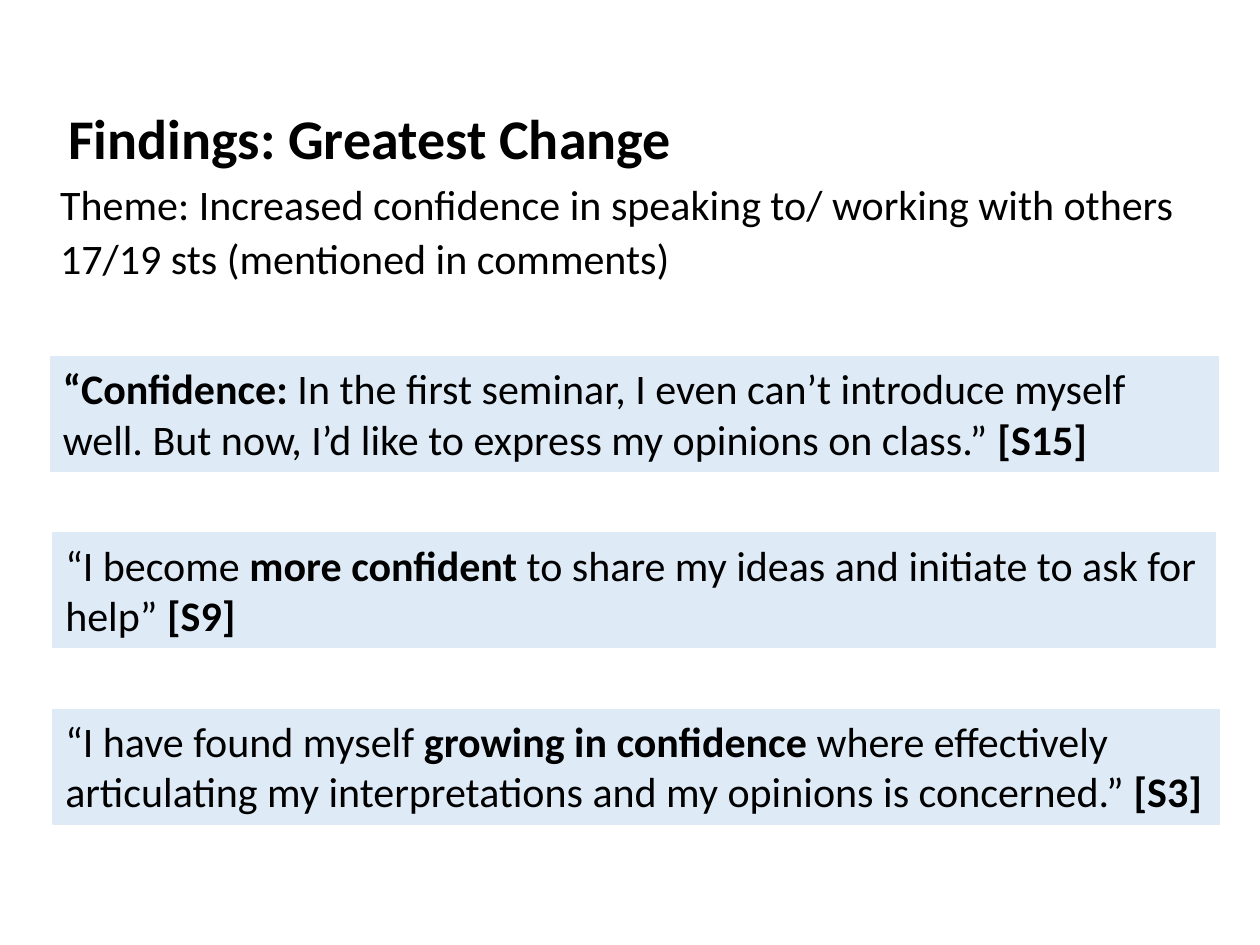
"""Build the findings slide: a title, a theme and three student quotes."""
from pptx import Presentation
from pptx.dml.color import RGBColor
from pptx.enum.shapes import MSO_SHAPE
from pptx.enum.text import MSO_ANCHOR, MSO_AUTO_SIZE, PP_ALIGN
from pptx.util import Inches, Pt

RECT = MSO_SHAPE.RECTANGLE
TOP = MSO_ANCHOR.TOP
LEFT = PP_ALIGN.LEFT
NO_FIT, GROW = MSO_AUTO_SIZE.NONE, MSO_AUTO_SIZE.SHAPE_TO_FIT_TEXT
COLORS = {"text": "000000", "panel": "DEEBF7"}
FONT = "Calibri"
TITLE_SIZE, TEXT_SIZE = 32, 24
QUOTE_TOP, QUOTE_PITCH, QUOTE_HEIGHT = 2.83, 1.4, 0.91

THEME = [
    "Theme: Increased confidence in speaking to/ working with others",
    "17/19 sts (mentioned in comments)",
]
QUOTES = [
    (0.4, 9.27, [
        ("“Confidence:", True),
        (" In the first seminar, I even can’t introduce myself well. "
         "But now, I’d like to express my opinions on class.” ", False),
        ("[S15]", True)]),
    (0.42, 9.23, [
        ("“I become ", False),
        ("more confident ", True),
        ("to share my ideas and initiate to ask for help” ", False),
        ("[S9]", True)]),
    (0.42, 9.26, [
        ("“I have found myself ", False),
        ("growing in confidence ", True),
        ("where effectively articulating my interpretations "
         "and my opinions is concerned.” ", False),
        ("[S3]", True)]),
]


def set_frame(tf, fit):
    tf.word_wrap = True
    tf.auto_size = fit
    tf.vertical_anchor = TOP


def set_font(p, size, bold=None):
    p.alignment = LEFT
    p.font.name = FONT
    p.font.size = Pt(size)
    p.font.bold = bold
    p.font.color.rgb = RGBColor.from_string(COLORS["text"])


prs = Presentation()
prs.slide_width, prs.slide_height = Inches(10), Inches(7.5)
s = prs.slides.add_slide(prs.slide_layouts[5])

title = s.shapes.title
title.left, title.top = Inches(0.34), Inches(0.75)
title.width, title.height = Inches(7.46), Inches(0.91)
tf = title.text_frame
set_frame(tf, NO_FIT)
tf.margin_left, tf.margin_top = Inches(0.2), Inches(0.07)
tf.text = "Findings: Greatest Change"
set_font(tf.paragraphs[0], TITLE_SIZE, True)

theme = s.shapes.add_textbox(Inches(0.38), Inches(1.41), Inches(9.34), Inches(5.12))
tf = theme.text_frame
set_frame(tf, NO_FIT)
tf.text = "\n".join(THEME)
for i, p in enumerate(tf.paragraphs):
    set_font(p, TEXT_SIZE)
    p.line_spacing = 0.9
    p.space_before = Pt(5 if i else 0)

for row, (left, width, runs) in enumerate(QUOTES):
    sp = s.shapes.add_shape(RECT, Inches(left), Inches(QUOTE_TOP + row * QUOTE_PITCH),
                            Inches(width), Inches(QUOTE_HEIGHT))
    sp.shadow.inherit = False
    sp.fill.solid()
    sp.fill.fore_color.rgb = RGBColor.from_string(COLORS["panel"])
    sp.line.color.rgb = RGBColor.from_string(COLORS["panel"])
    sp.line.width = Pt(0.75)
    set_frame(sp.text_frame, GROW)
    p = sp.text_frame.paragraphs[0]
    set_font(p, TEXT_SIZE)
    for text, bold in runs:
        r = p.add_run()
        r.text = text
        r.font.bold = bold

prs.save("out.pptx")
